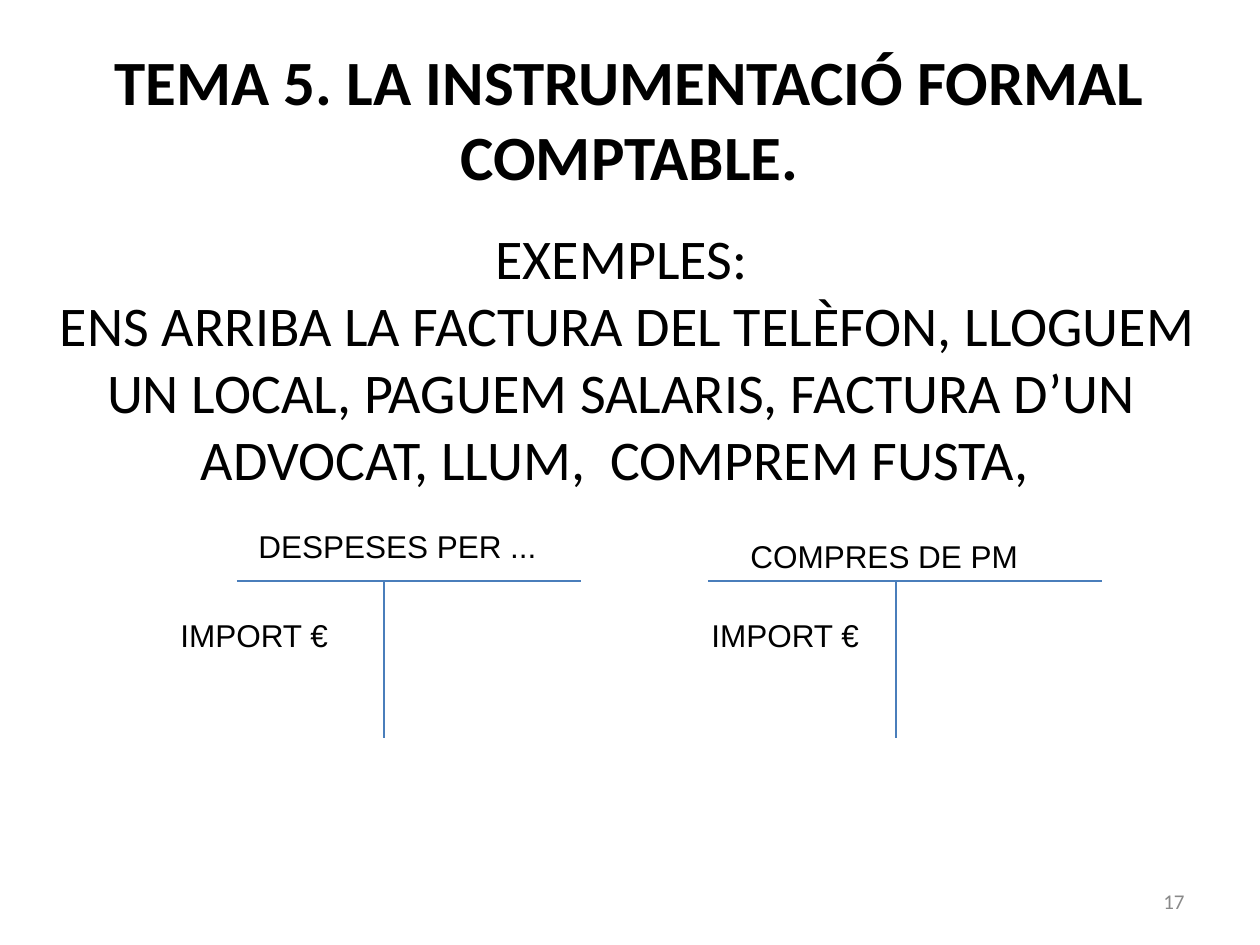
from dataclasses import dataclass

from lxml.etree import SubElement
from pptx import Presentation
from pptx.dml.color import RGBColor
from pptx.enum.shapes import MSO_CONNECTOR
from pptx.enum.text import MSO_ANCHOR, PP_ALIGN
from pptx.oxml.ns import qn
from pptx.slide import Slide
from pptx.util import Emu, Pt

COLORS = {"ink": "000000", "line": "4A7EBB", "gray": "898989"}


@dataclass
class Label:
    text: str
    x: int
    y: int
    w: int
    h: int
    size: int = 18
    font: str = "Arial"
    color: str = "ink"
    bold: bool = False
    align: PP_ALIGN = PP_ALIGN.LEFT
    anchor: MSO_ANCHOR = MSO_ANCHOR.TOP


@dataclass
class Ledger:
    left: int
    right: int
    stem: int
    head: Label
    entry: int


def px(n: int) -> Emu:
    return Emu(round(n * 914400 / 126))


def color(name: str) -> RGBColor:
    return RGBColor.from_string(COLORS[name])


def draw_label(slide: Slide, label: Label) -> None:
    box = slide.shapes.add_textbox(px(label.x), px(label.y), px(label.w), px(label.h))
    frame = box.text_frame
    frame.word_wrap = True
    frame.vertical_anchor = label.anchor
    frame.text = label.text
    for para in frame.paragraphs:
        para.alignment = label.align
        para.font.size = Pt(label.size)
        para.font.name = label.font
        para.font.bold = label.bold
        para.font.color.rgb = color(label.color)


def draw_line(slide: Slide, x1: int, y1: int, x2: int, y2: int) -> None:
    line = slide.shapes.add_connector(
        MSO_CONNECTOR.STRAIGHT, px(x1), px(y1), px(x2), px(y2))
    line.line.color.rgb = color("line")
    line.line.width = Pt(0.75)
    SubElement(line._element.spPr, qn("a:effectLst"))


def draw_ledger(slide: Slide, ledger: Ledger) -> None:
    top, base = 581, 738
    draw_line(slide, ledger.left, top, ledger.right, top)
    draw_line(slide, ledger.stem, top, ledger.stem, base)
    draw_label(slide, ledger.head)
    draw_label(slide, Label("IMPORT €", ledger.entry, 610, 186, 50))


LABELS = [
    Label("TEMA 5. LA INSTRUMENTACIÓ FORMAL COMPTABLE.", 94, 29, 1071, 178,
          36, "Calibri", bold=True, align=PP_ALIGN.CENTER, anchor=MSO_ANCHOR.MIDDLE),
    Label("EXEMPLES:\n ENS ARRIBA LA FACTURA DEL TELÈFON, LLOGUEM UN LOCAL, "
          "PAGUEM SALARIS, FACTURA D’UN ADVOCAT, LLUM,  COMPREM FUSTA, ",
          30, 217, 1183, 640, 32, "Calibri", align=PP_ALIGN.CENTER),
    Label("17", 903, 876, 294, 50, 12, "Calibri", "gray",
          align=PP_ALIGN.RIGHT, anchor=MSO_ANCHOR.MIDDLE),
]

LEDGERS = [
    Ledger(237, 581, 384, Label("DESPESES PER ...", 246, 521, 315, 50), 168),
    Ledger(708, 1102, 896, Label("COMPRES DE PM", 738, 531, 325, 50), 699),
]


def main() -> None:
    deck = Presentation()
    deck.slide_width, deck.slide_height = px(1260), px(945)
    slide = deck.slides.add_slide(deck.slide_layouts[6])
    for label in LABELS:
        draw_label(slide, label)
    for ledger in LEDGERS:
        draw_ledger(slide, ledger)
    deck.save("out.pptx")


if __name__ == "__main__":
    main()
